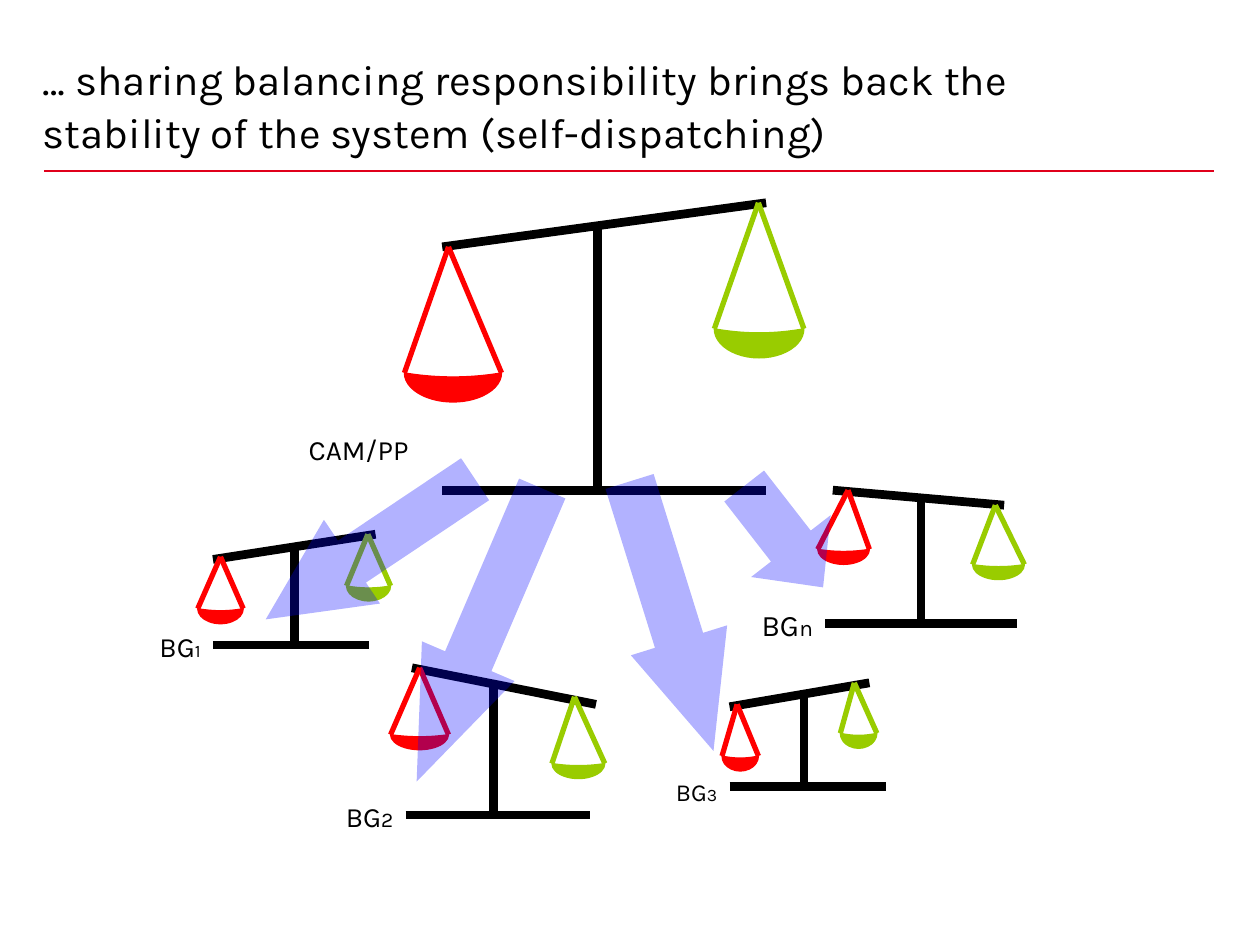
"""Build the slide on shared balancing responsibility, with one main scale and four group scales."""
from lxml import etree
from pptx import Presentation
from pptx.dml.color import RGBColor
from pptx.enum.shapes import MSO_CONNECTOR, MSO_SHAPE
from pptx.enum.text import MSO_ANCHOR, PP_ALIGN
from pptx.oxml.ns import qn
from pptx.util import Pt

STRAIGHT = MSO_CONNECTOR.STRAIGHT
MOON, LEFT_ARROW = MSO_SHAPE.MOON, MSO_SHAPE.LEFT_ARROW
TOP, LEFT, RIGHT = MSO_ANCHOR.TOP, PP_ALIGN.LEFT, PP_ALIGN.RIGHT
BLACK = RGBColor(0x00, 0x00, 0x00)
RED = RGBColor(0xFF, 0x00, 0x00)
GREEN = RGBColor(0x99, 0xCC, 0x00)
BLUE = RGBColor(0x00, 0x00, 0xFF)
CRIMSON = RGBColor(0xE0, 0x00, 0x1B)
FONT = "Karla"
ARROW_HEIGHT = 57.6
ARROW_OPACITY = 30

TITLE = "… sharing balancing responsibility brings back the stability of the system (self-dispatching)"

# beam: x1, y1, x2, y2; post: x, top; base: left, right, y; pan: hook x, hook y, left, right, rim
SCALES = [
    {"beam": (252.7, 141.1, 437.8, 115.9), "post": (341.3, 128.9), "base": (252.7, 437.8, 280.1),
     "red": (256.3, 141.1, 231.1, 286.6, 213.1), "green": (433.4, 115.9, 408.2, 459.4, 187.9),
     "depth": 16.6, "label": [("CAM/PP", 16)], "label_box": (139, 243.4, 101.5, 26.6)},
    {"beam": (121.7, 319.7, 214.6, 305.3), "post": (168.5, 313.9), "base": (121.7, 211, 368.6),
     "red": (126, 318.2, 113, 139, 347.8), "green": (210.2, 305.3, 198, 223.2, 334.8),
     "depth": 8.6, "label": [("BG", 16), ("1", 10)], "label_box": (72, 356.4, 49.7, 26.6)},
    {"beam": (235.4, 381.6, 340.6, 402.5), "post": (282.2, 390.2), "base": (231.8, 337, 465.8),
     "red": (239.8, 381.6, 223.2, 256.3, 419.8), "green": (328.3, 398.2, 315.4, 345.6, 436.3),
     "depth": 8.6, "label": [("BG", 16), ("2", 12)], "label_box": (180.7, 453.6, 51.1, 26.6)},
    {"beam": (416.9, 403.9, 496.8, 390.2), "post": (459.4, 398.2), "base": (416.9, 506.2, 449.3),
     "red": (421.2, 402.5, 412.6, 433.4, 432), "green": (488.2, 390.2, 480.2, 501.1, 419),
     "depth": 8.6, "label": [("BG", 14), ("3", 10)], "label_box": (367.2, 440.6, 49.7, 23.8)},
    {"beam": (475.9, 280.1, 573.8, 288.7), "post": (526.3, 284.4), "base": (471.6, 581, 356.4),
     "red": (484.6, 280.1, 467.3, 496.8, 313.9), "green": (568.8, 288.7, 555.8, 585.4, 322.6),
     "depth": 8.6, "label": [("BG", 17), ("n", 13)], "label_box": (417.6, 343.4, 54, 27.4)},
]

# left, top, length, rotation, head ratio
ARROWS = [
    (139.7, 285.1, 144, 326.2, 1.03),
    (182.9, 334.1, 182.2, 293.2, 1.3),
    (303.1, 323.3, 161.3, 252.7, 1.15),
    (411.1, 277.9, 73.4, 232.1, 0.52),
]


def add_line(slide, x1, y1, x2, y2, color, width):
    line = slide.shapes.add_connector(STRAIGHT, Pt(x1), Pt(y1), Pt(x2), Pt(y2))
    line.line.color.rgb = color
    line.line.width = Pt(width)
    etree.SubElement(line._element.spPr, qn("a:effectLst"))


def add_text(slide, box, runs, align, margins, spacing=None):
    frame = slide.shapes.add_textbox(*map(Pt, box)).text_frame
    side, edge = map(Pt, margins)
    frame_format = {"word_wrap": True, "vertical_anchor": TOP, "margin_left": side,
                    "margin_right": side, "margin_top": edge, "margin_bottom": edge}
    for name, value in frame_format.items():
        setattr(frame, name, value)
    paragraph = frame.paragraphs[0]
    paragraph.alignment = align
    if spacing:
        paragraph.line_spacing = Pt(spacing)
    for text, size in runs:
        run = paragraph.add_run()
        run.text = text
        run.font.color.rgb = BLACK
        for name, value in {"name": FONT, "size": Pt(size)}.items():
            setattr(run.font, name, value)


def add_filled(slide, kind, box, rotation, adjustments, color):
    shape = slide.shapes.add_shape(kind, *map(Pt, box))
    shape.shadow.inherit = False
    shape.rotation = rotation
    for index, value in enumerate(adjustments):
        shape.adjustments[index] = value
    shape.fill.solid()
    shape.fill.fore_color.rgb = color
    return shape


def add_pan(slide, pan, depth, color):
    hook_x, hook_y, left, right, rim = pan
    width = right - left
    box = ((left + right - depth) / 2, rim + (depth - width) / 2, depth, width)
    bowl = add_filled(slide, MOON, box, 270, [0.86], color)
    bowl.line.color.rgb = color
    bowl.line.width = Pt(0.75)
    for end in (left, right):
        add_line(slide, hook_x, hook_y, end, rim, color, 3)


def add_scale(slide, scale):
    post_x, post_top = scale["post"]
    left, right, floor = scale["base"]
    for ends in (scale["beam"], (post_x, post_top, post_x, floor), (left, floor, right, floor)):
        add_line(slide, *ends, BLACK, 5)
    add_text(slide, scale["label_box"], scale["label"], RIGHT, (7.2, 3.6))
    for side, color in (("green", GREEN), ("red", RED)):
        add_pan(slide, scale[side], scale["depth"], color)


def add_arrow(slide, left, top, length, rotation, head):
    box = (left, top, length, ARROW_HEIGHT)
    arrow = add_filled(slide, LEFT_ARROW, box, rotation, [0.5, head], BLUE)
    arrow.line.fill.background()
    color = arrow._element.spPr.find(qn("a:solidFill")).find(qn("a:srgbClr"))
    etree.SubElement(color, qn("a:alpha"), val=str(ARROW_OPACITY * 1000))


def main():
    deck = Presentation()
    deck.slide_width, deck.slide_height = Pt(720), Pt(540)
    slide = deck.slides.add_slide(deck.slide_layouts[6])
    add_line(slide, 25.2, 97.9, 694, 97.9, CRIMSON, 1)
    add_text(slide, (24.5, 29.5, 556.6, 61.9), [(TITLE, 24)], LEFT, (0, 0), 30)
    for scale in SCALES:
        add_scale(slide, scale)
    for arrow in ARROWS:
        add_arrow(slide, *arrow)
    deck.save("out.pptx")


if __name__ == "__main__":
    main()
